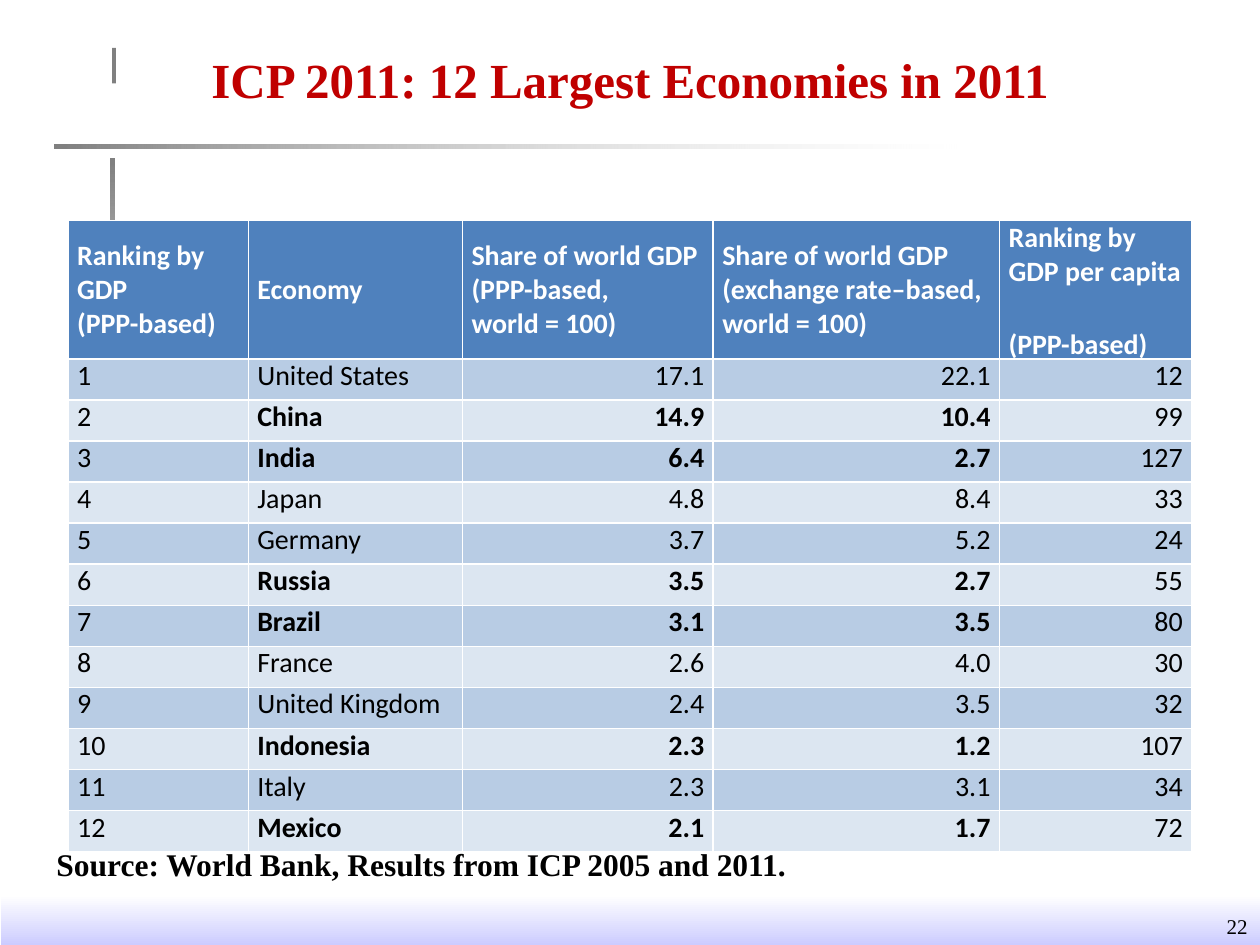
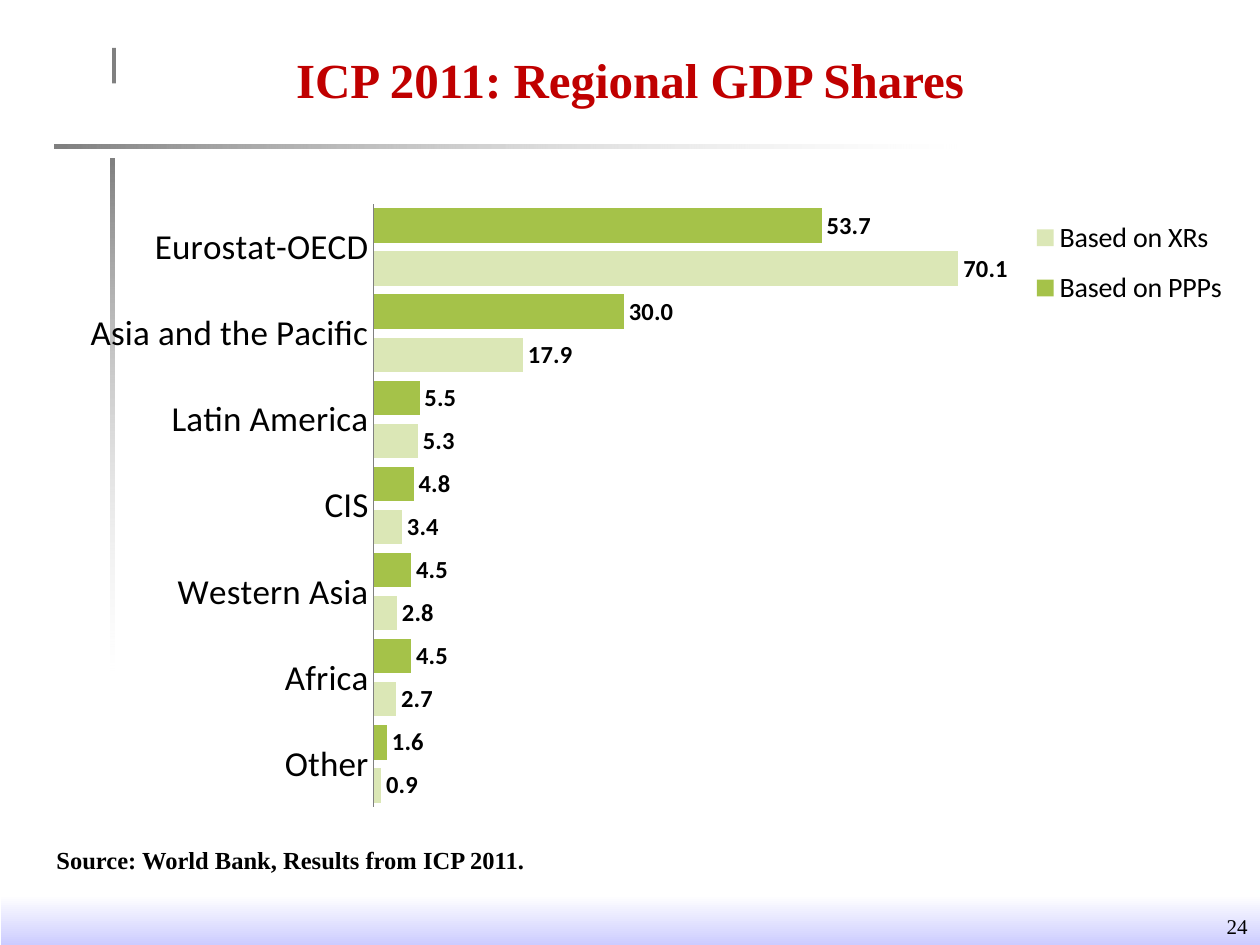
from dataclasses import dataclass

from lxml import etree
from pptx import Presentation
from pptx.chart.data import CategoryChartData
from pptx.dml.color import RGBColor
from pptx.enum.chart import (XL_CHART_TYPE, XL_LABEL_POSITION,
                             XL_LEGEND_POSITION, XL_TICK_MARK)
from pptx.enum.shapes import MSO_SHAPE
from pptx.enum.text import MSO_ANCHOR, PP_ALIGN
from pptx.oxml.ns import qn
from pptx.slide import Slide
from pptx.util import Pt

BARS = XL_CHART_TYPE.BAR_CLUSTERED
OUTER = XL_LABEL_POSITION.OUTSIDE_END
BOTTOM = XL_LEGEND_POSITION.BOTTOM
NO_TICK = XL_TICK_MARK.NONE
RECT = MSO_SHAPE.RECTANGLE
TOP, MIDDLE = MSO_ANCHOR.TOP, MSO_ANCHOR.MIDDLE
LEFT, CENTER, RIGHT = PP_ALIGN.LEFT, PP_ALIGN.CENTER, PP_ALIGN.RIGHT

BLACK = RGBColor(0x00, 0x00, 0x00)
WHITE = RGBColor(0xFF, 0xFF, 0xFF)
GRAY = RGBColor(0x80, 0x80, 0x80)
LILAC = RGBColor(0xCC, 0xCC, 0xFF)
RED = RGBColor(0xC0, 0x00, 0x00)
BLUE = RGBColor(0x4F, 0x81, 0xBD)
STRIPES = (RGBColor(0xB8, 0xCC, 0xE4), RGBColor(0xDC, 0xE6, 0xF1))
GREEN = RGBColor(0xA5, 0xC2, 0x49)
PALE = RGBColor(0xDB, 0xE7, 0xB6)

SERIF, SANS = "Times New Roman", "Calibri"


@dataclass(frozen=True)
class Box:
    left: float
    top: float
    width: float
    height: float

    def place(self) -> tuple:
        return Pt(self.left), Pt(self.top), Pt(self.width), Pt(self.height)


@dataclass(frozen=True)
class Style:
    size: float
    color: RGBColor = BLACK
    bold: bool = False
    face: str = SERIF


@dataclass(frozen=True)
class Band:
    box: Box
    start: RGBColor
    end: RGBColor
    angle: int = 0
    alpha: int = 100


BANDS = (
    Band(Box(31, 82.6, 515.5, 2.5), GRAY, WHITE, 0, 29),
    Band(Box(63.4, 90.7, 2.2, 292.3), GRAY, WHITE, 270, 29),
    Band(Box(64.1, 27.4, 2.2, 20.2), GRAY, GRAY),
    Band(Box(0.7, 511.2, 719.3, 28.8), WHITE, LILAC, 270),
)
TITLE_BOX = Box(36, 21.6, 648, 55.4)
NOTE_BOX = Box(25.2, 479.5, 532.8, 28.8)
PAGE_BOX = Box(572.4, 518.4, 147.6, 21.6)
TABLE_BOX = Box(38.9, 126, 642.2, 343.4)
CHART_BOX = Box(-28, 108, 732, 360)

TITLE = Style(28, RED, True)
PAGE = Style(12)
HEAD = Style(16, WHITE, True, SANS)
BODY = Style(16, face=SANS)
STRONG = Style(16, bold=True, face=SANS)

WIDTHS = (103, 122.4, 143.3, 163.6, 109.9)
HEAD_HIGH, ROW_HIGH = 62, 23.45
HEADS = (
    "Ranking by \nGDP \n(PPP-based)",
    "Economy",
    "Share of world GDP \n(PPP-based, \nworld = 100)",
    "Share of world GDP \n(exchange rate–based, \nworld = 100)",
    "Ranking by \nGDP per capita \n(PPP-based)",
)
ROWS = (
    ("United States", "17.1", "22.1", "12"),
    ("China", "14.9", "10.4", "99"),
    ("India", "6.4", "2.7", "127"),
    ("Japan", "4.8", "8.4", "33"),
    ("Germany", "3.7", "5.2", "24"),
    ("Russia", "3.5", "2.7", "55"),
    ("Brazil", "3.1", "3.5", "80"),
    ("France", "2.6", "4.0", "30"),
    ("United Kingdom", "2.4", "3.5", "32"),
    ("Indonesia", "2.3", "1.2", "107"),
    ("Italy", "2.3", "3.1", "34"),
    ("Mexico", "2.1", "1.7", "72"),
)
MARKED = {"China", "India", "Russia", "Brazil", "Indonesia", "Mexico"}

REGIONS = ("Eurostat-OECD", "Asia and the Pacific", "Latin America", "CIS",
           "Western Asia", "Africa", "Other")
SHARES = (
    ("Based on PPPs", (53.7, 30, 5.5, 4.8, 4.5, 4.5, 1.6), GREEN),
    ("Based on XRs", (70.1, 17.9, 5.3, 3.4, 2.8, 2.7, 0.9), PALE),
)
PLOT_AREA = (0.33, 0.024, 0.521, 0.957)
KEY_AREA = (0.84, 0.025, 0.16, 0.185)


def set_font(font, style: Style) -> None:
    font.name, font.size, font.bold = style.face, Pt(style.size), style.bold
    font.color.rgb = style.color


def write(frame, text: str, style: Style, align=LEFT) -> None:
    para = frame.paragraphs[0]
    para.alignment = align
    for num, line in enumerate(text.split("\n")):
        if num:
            para.add_line_break()
        run = para.add_run()
        run.text = line
        set_font(run.font, style)


def add_text(slide: Slide, box: Box, text: str, style: Style,
             align=LEFT) -> None:
    frame = slide.shapes.add_textbox(*box.place()).text_frame
    frame.word_wrap = True
    write(frame, text, style, align)


def add_band(slide: Slide, band: Band) -> None:
    shape = slide.shapes.add_shape(RECT, *band.box.place())
    shape.shadow.inherit = False
    shape.line.fill.background()
    if band.start == band.end:
        shape.fill.solid()
        shape.fill.fore_color.rgb = band.start
        return
    shape.fill.gradient()
    shape.fill.gradient_angle = band.angle
    for stop, color in zip(shape.fill.gradient_stops, (band.start, band.end)):
        stop.color.rgb = color
    if band.alpha < 100:
        last = shape.element.findall(".//" + qn("a:srgbClr"))[-1]
        etree.SubElement(last, qn("a:alpha"), val=str(band.alpha * 1000))


def add_page(deck, title: str, note: str, size: int, page: int) -> Slide:
    """Add a slide with the shared bands, title, source note and number."""
    slide = deck.slides.add_slide(deck.slide_layouts[5])
    for band in BANDS:
        add_band(slide, band)
    add_text(slide, PAGE_BOX, str(page), PAGE, RIGHT)
    head = slide.shapes.title
    head.left, head.top, head.width, head.height = TITLE_BOX.place()
    frame = head.text_frame
    frame.vertical_anchor = MIDDLE
    frame.margin_bottom = Pt(11.5)
    write(frame, title, TITLE, CENTER)
    add_text(slide, NOTE_BOX, note, Style(size, bold=True))
    return slide


def add_edge(cell, sides: str, width: float = 1) -> None:
    """Draw white cell borders; sides are given in the order L, R, T, B."""
    props = cell._tc.get_or_add_tcPr()
    for num, side in enumerate(sides):
        line = etree.Element(qn("a:ln" + side), w=str(Pt(width)))
        fill = etree.SubElement(line, qn("a:solidFill"))
        etree.SubElement(fill, qn("a:srgbClr"), val=str(WHITE))
        props.insert(num, line)


def fill_cell(cell, text: str, style: Style, color: RGBColor,
              align=LEFT, anchor=TOP) -> None:
    cell.margin_left = cell.margin_right = Pt(5.2)
    cell.margin_top = cell.margin_bottom = 0
    cell.vertical_anchor = anchor
    cell.fill.solid()
    cell.fill.fore_color.rgb = color
    add_edge(cell, "LRTB")
    write(cell.text_frame, text, style, align)


def add_ranks(slide: Slide) -> None:
    table = slide.shapes.add_table(len(ROWS) + 1, len(HEADS),
                                   *TABLE_BOX.place()).table
    for col, width in zip(table.columns, WIDTHS):
        col.width = Pt(width)
    for num, row in enumerate(table.rows):
        row.height = Pt(ROW_HIGH if num else HEAD_HIGH)
    for col, text in enumerate(HEADS):
        fill_cell(table.cell(0, col), text, HEAD, BLUE, anchor=MIDDLE)
    for rank, row in enumerate(ROWS, 1):
        for col, text in enumerate((str(rank), *row)):
            bold = row[0] in MARKED and 1 <= col <= 3
            fill_cell(table.cell(rank, col), text, STRONG if bold else BODY,
                      STRIPES[(rank - 1) % 2], RIGHT if col > 1 else LEFT)


def set_area(part, area: tuple, inner: bool = False) -> None:
    """Give a plot or legend a fixed place, as shares of the chart."""
    layout = part.find(qn("c:layout"))
    if layout is None:
        layout = etree.Element(qn("c:layout"))
        pos = part.find(qn("c:legendPos"))
        part.insert(0 if pos is None else part.index(pos) + 1, layout)
    manual = etree.SubElement(layout, qn("c:manualLayout"))
    pairs = [("layoutTarget", "inner")] if inner else []
    pairs += [("xMode", "edge"), ("yMode", "edge"), *zip("xywh", area)]
    for tag, val in pairs:
        etree.SubElement(manual, qn("c:" + tag), val=str(val))


def add_shares(slide: Slide) -> None:
    data = CategoryChartData(number_format="#,##0.0")
    data.categories = REGIONS
    for name, vals, _ in SHARES:
        data.add_series(name, vals)
    chart = slide.shapes.add_chart(BARS, *CHART_BOX.place(), data).chart
    chart.has_title = False
    set_font(chart.font, Style(10))

    plot = chart.plots[0]
    plot.gap_width, plot.overlap = 25, -25
    plot.vary_by_categories = False
    for series, (_, _, color) in zip(plot.series, SHARES):
        series.format.fill.solid()
        series.format.fill.fore_color.rgb = color
        series.invert_if_negative = False
        labels = series.data_labels
        labels.show_value = True
        labels.number_format = "#,##0.0"
        labels.number_format_is_linked = False
        labels.position = OUTER
        set_font(labels.font, Style(14, bold=True, face=SANS))

    names = chart.category_axis
    names.reverse_order = True
    names.major_tick_mark = names.minor_tick_mark = NO_TICK
    names.format.line.color.rgb = GRAY
    set_font(names.tick_labels.font, Style(20, face=SANS))
    scale = chart.value_axis
    scale.minimum_scale, scale.maximum_scale = 0, 80
    scale.has_major_gridlines = False
    scale.visible = False

    chart.has_legend = True
    key = chart.legend
    key.position = BOTTOM
    key.include_in_layout = False
    set_font(key.font, BODY)
    root = chart.element
    set_area(root.find(".//" + qn("c:plotArea")), PLOT_AREA, True)
    set_area(root.find(".//" + qn("c:legend")), KEY_AREA)


def main() -> None:
    deck = Presentation()
    deck.slide_width, deck.slide_height = Pt(720), Pt(540)
    add_ranks(add_page(deck, "ICP 2011: 12 Largest Economies in 2011",
                       "Source: World Bank, Results from ICP 2005 and 2011.",
                       18, 22))
    add_shares(add_page(deck, "ICP 2011: Regional GDP Shares",
                        "Source: World Bank, Results from ICP 2011.", 14, 24))
    deck.save("out.pptx")


if __name__ == "__main__":
    main()
